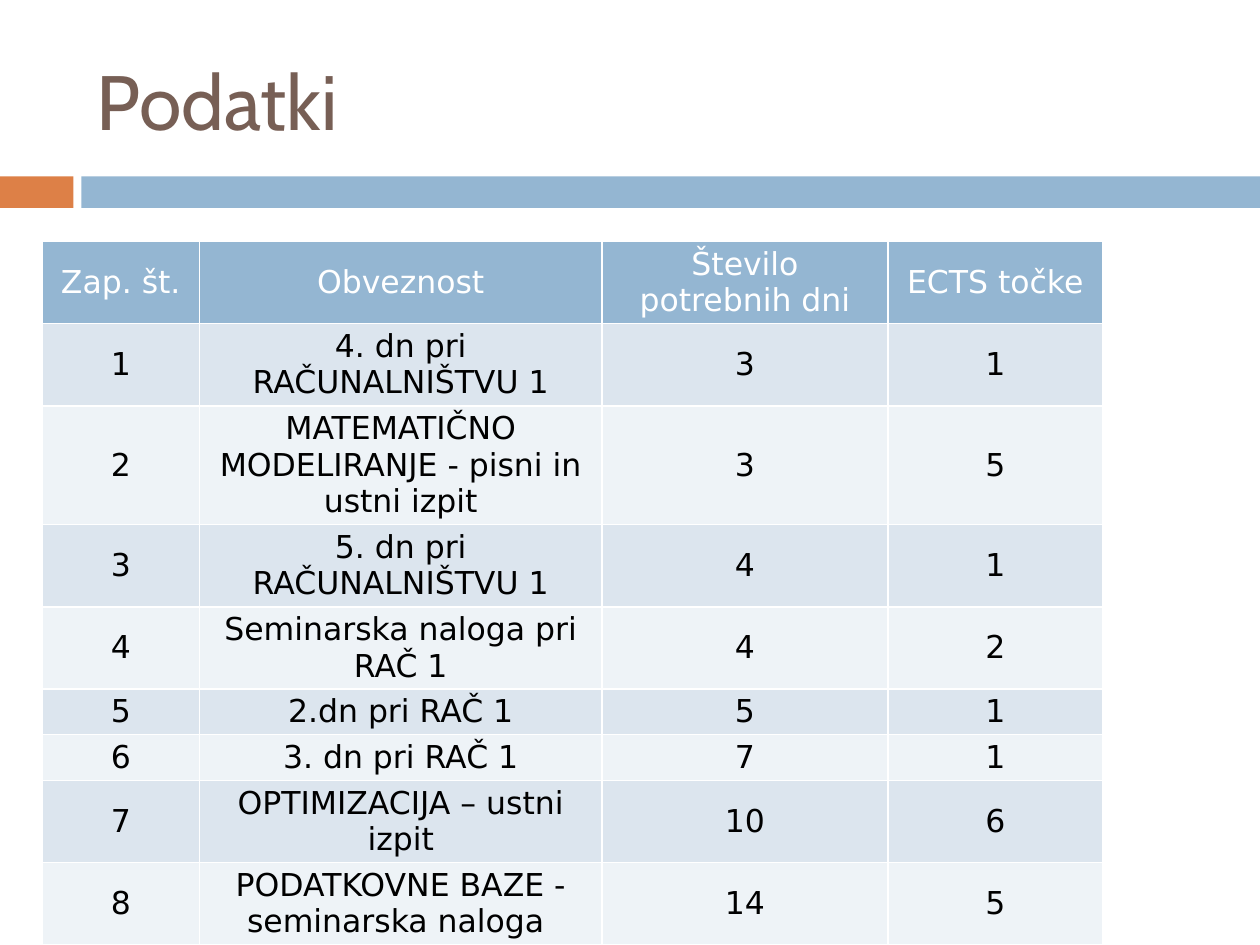
from pptx import Presentation
from pptx.dml.color import RGBColor
from pptx.enum import shapes, text
from pptx.util import Pt

BROWN = RGBColor(0x77, 0x5F, 0x55)
ORANGE = RGBColor(0xDD, 0x80, 0x47)
BLUE = RGBColor(0x94, 0xB6, 0xD2)
DARK_BAND = RGBColor(0xDC, 0xE5, 0xEE)
LIGHT_BAND = RGBColor(0xEE, 0xF3, 0xF7)
WHITE = RGBColor(0xFF, 0xFF, 0xFF)
BLACK = RGBColor(0, 0, 0)

HEADINGS = ("Zap. št.", "Obveznost", "Število potrebnih dni", "ECTS točke")
OBLIGATIONS = (
    ("4. dn pri RAČUNALNIŠTVU 1", 3, 1),
    ("MATEMATIČNO MODELIRANJE - pisni in ustni izpit", 3, 5),
    ("5. dn pri RAČUNALNIŠTVU 1", 4, 1),
    ("Seminarska naloga pri RAČ 1", 4, 2),
    ("2.dn pri RAČ 1", 5, 1),
    ("3. dn pri RAČ 1", 7, 1),
    ("OPTIMIZACIJA – ustni izpit", 10, 6),
    ("PODATKOVNE BAZE - seminarska naloga ", 14, 5),
)
COLUMN_SHARES = (1.25, 3.19, 2.27, 1.7)
ROW_HEIGHT = 26
SIDE_MARGIN = 5.2
EDGE_MARGIN = 2.6


def format_text(frame, font_name, size, color, alignment):
    """Give every run in a frame the same look and alignment."""
    for paragraph in frame.paragraphs:
        paragraph.alignment = alignment
        for run in paragraph.runs:
            run.font.name = font_name
            run.font.size = Pt(size)
            run.font.bold = False
            run.font.color.rgb = color


def place_title(slide, left, top, width, height):
    """Move and format the title placeholder."""
    title = slide.shapes.title
    title.left, title.top = Pt(left), Pt(top)
    title.width, title.height = Pt(width), Pt(height)
    title.text_frame.text = "Podatki"
    title.text_frame.vertical_anchor = text.MSO_ANCHOR.MIDDLE
    format_text(title.text_frame, "Cabin", 44, BROWN, text.PP_ALIGN.LEFT)


def add_divider(slide, left, top, width, height):
    """Draw the orange tab and the blue bar, with a gap between them."""
    tab_width, gap = 42, 4.5
    bar_offset = tab_width + gap
    parts = ((0, tab_width, ORANGE), (bar_offset, width - bar_offset, BLUE))
    for offset, part_width, color in parts:
        part = slide.shapes.add_shape(
            shapes.MSO_SHAPE.RECTANGLE,
            Pt(left + offset), Pt(top), Pt(part_width), Pt(height))
        part.shadow.inherit = False
        part.fill.solid()
        part.fill.fore_color.rgb = color
        part.line.fill.background()


def fill_cell(cell, content, fill, color):
    """Write one table cell with tight margins."""
    cell.text_frame.text = str(content)
    format_text(cell.text_frame, "DejaVu Sans", 18, color, text.PP_ALIGN.CENTER)
    cell.vertical_anchor = text.MSO_ANCHOR.MIDDLE
    cell.margin_left = cell.margin_right = Pt(SIDE_MARGIN)
    cell.margin_top = cell.margin_bottom = Pt(EDGE_MARGIN)
    cell.fill.solid()
    cell.fill.fore_color.rgb = fill


def add_obligations_table(slide, left, top, width):
    """Add the numbered table of obligations, whose rows grow with their text."""
    rows = [HEADINGS]
    rows += [(number, *entry) for number, entry in enumerate(OBLIGATIONS, 1)]
    table = slide.shapes.add_table(
        len(rows), len(HEADINGS),
        Pt(left), Pt(top), Pt(width), Pt(ROW_HEIGHT * len(rows))).table
    for column, share in zip(table.columns, COLUMN_SHARES):
        column.width = Pt(width * share / sum(COLUMN_SHARES))
    for index, (row, contents) in enumerate(zip(table.rows, rows)):
        row.height = Pt(ROW_HEIGHT)
        if index == 0:
            fill, color = BLUE, WHITE
        else:
            fill, color = (DARK_BAND if index % 2 else LIGHT_BAND), BLACK
        for cell, content in zip(row.cells, contents):
            fill_cell(cell, content, fill, color)


def main():
    """Build and save the slide."""
    presentation = Presentation()
    presentation.slide_width, presentation.slide_height = Pt(720), Pt(540)
    slide = presentation.slides.add_slide(presentation.slide_layouts[5])
    add_divider(slide, 0, 100.8, 720, 18)
    place_title(slide, 48, 18, 642, 78)
    add_obligations_table(slide, 24, 138, 606)
    presentation.save("out.pptx")


if __name__ == "__main__":
    main()
